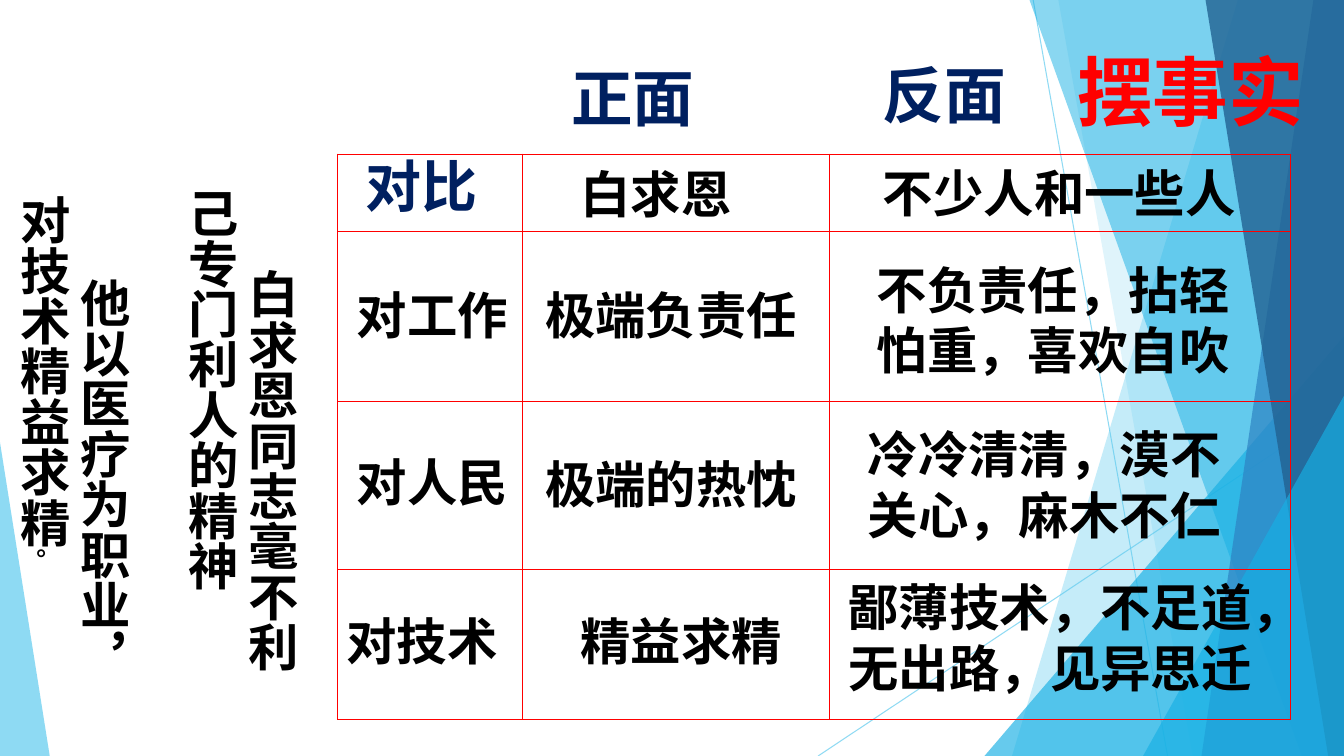
from dataclasses import dataclass

from lxml import etree
from pptx import Presentation
from pptx.dml.color import RGBColor
from pptx.enum.shapes import MSO_CONNECTOR, MSO_SHAPE
from pptx.enum.text import MSO_AUTO_SIZE
from pptx.oxml.ns import qn
from pptx.util import Emu, Inches, Pt

STRAIGHT = MSO_CONNECTOR.STRAIGHT
TRIANGLE = MSO_SHAPE.ISOSCELES_TRIANGLE
GROW = MSO_AUTO_SIZE.SHAPE_TO_FIT_TEXT
COLS, ROWS = 40, 22.5
CELL = Inches(13.333) / COLS


@dataclass(frozen=True)
class Theme:
    """Colours, fonts and type sizes of the slide."""
    sky: str = "5FCBEF"
    cyan: str = "17B0E4"
    blue: str = "2E83C3"
    deep: str = "226292"
    navy: str = "002060"
    red: str = "FF0000"
    black: str = "000000"
    font: str = "Cabin"
    corner_font: str = "Noto Sans CJK JP"
    head_font: str = "Noto Sans CJK SC"
    small: int = 18
    body: int = 36
    corner: int = 40
    head: int = 44
    title: int = 54


T = Theme()

FACET_TRIANGLES = {
    "wide": (29.3, 10, 10.7, 12.5),
    "narrow": (34.02, 11.78, 5.98, 10.72),
    "left": (0, 13.17, 1.48, 9.33),
}
TABLE_BOX = (10.05, 4.59)
TABLE_COLS = (5.49, 9.15, 13.71)
TABLE_ROWS = (2.31, 5.04, 5.01, 4.47)
ENTRIES = (
    ("白求恩", (16.98, 4.71, 5.13, 2.1), False),
    ("不少人和一些人", (25.98, 4.68, 11.13, 2.1), False),
    ("对工作", (10.32, 8.31, 5.13, 2.1), False),
    ("极端负责任", (15.93, 8.31, 8.16, 2.1), False),
    ("不负责任，拈轻怕重，喜欢自吹", (25.8, 7.56, 11.52, 3.9), True),
    ("对人民", (10.32, 13.29, 5.13, 2.1), False),
    ("极端的热忱", (15.93, 13.35, 8.16, 2.1), False),
    ("冷冷清清，漠不关心，麻木不仁", (25.53, 12.45, 12.45, 3.9), True),
    ("对技术", (10.02, 18, 5.13, 2.1), False),
    ("精益求精", (16.98, 18, 6.66, 2.1), False),
    ("鄙薄技术，不足道，无出路，见异思迁", (24.96, 17.01, 12.78, 3.93), True),
)


def grid(*units):
    """Convert grid units to slide lengths."""
    return [Emu(round(u * CELL)) for u in units]


def set_alpha(shape, percent):
    """Make every colour of a shape partly transparent."""
    for clr in shape._element.iter(qn("a:srgbClr")):
        etree.SubElement(clr, qn("a:alpha")).set("val", str(percent * 1000))


def paint(s, color, alpha):
    """Give a shape a translucent fill without line or shadow."""
    s.shadow.inherit = False
    s.fill.solid()
    s.fill.fore_color.rgb = RGBColor.from_string(color)
    s.line.fill.background()
    set_alpha(s, alpha)


def add_ray(slide, start, end):
    """Draw a thin translucent line."""
    ray = slide.shapes.add_connector(STRAIGHT, *grid(*start, *end))
    ray.line.color.rgb = RGBColor.from_string(T.sky)
    ray.line.width = Pt(0.75)
    etree.SubElement(ray._element.spPr, qn("a:effectLst"))
    set_alpha(ray, 70)


def add_band(slide, top, bottom, color, alpha):
    """Fill from a slanted left edge to the right side of the slide."""
    start, *rest = [grid(*pt) for pt in
                    ((top, 0), (COLS, 0), (COLS, ROWS), (bottom, ROWS))]
    builder = slide.shapes.build_freeform(*start, scale=1.0)
    builder.add_line_segments(rest, close=True)
    paint(builder.convert_to_shape(), color, alpha)


def add_triangle(slide, box, apex, color, alpha):
    """Draw a right triangle with its apex at one side."""
    s = slide.shapes.add_shape(TRIANGLE, *grid(*box))
    s.adjustments[0] = apex
    paint(s, color, alpha)


def add_run(p, text, size, color, font):
    """Append a bold run."""
    r = p.add_run()
    r.text = text
    r.font.size = Pt(size)
    r.font.bold = True
    r.font.name = font
    r.font.color.rgb = RGBColor.from_string(color)
    etree.SubElement(r.font._element, qn("a:ea")).set("typeface", T.font)


def add_text(slide, text, box, size=T.body, color=T.black, font=T.font,
             wrap=True, indent=None, ending=""):
    """Add a text box; an indent makes it vertical with a set-in first line."""
    sp = slide.shapes.add_textbox(*grid(*box))
    tf = sp.text_frame
    tf.word_wrap = wrap
    tf.auto_size = GROW
    p = tf.paragraphs[0]
    add_run(p, text, size, color, font)
    if ending:
        add_run(p, ending, T.small, color, font)
    if indent:
        tf._txBody.bodyPr.set("vert", "eaVert")
        p._p.get_or_add_pPr().set("indent", str(grid(indent)[0]))


def add_border(cell, side):
    """Draw one red cell border."""
    ln = etree.Element(qn(f"a:ln{side}"), w=str(Pt(1)))
    fill = etree.SubElement(ln, qn("a:solidFill"))
    etree.SubElement(fill, qn("a:srgbClr")).set("val", T.red)
    return ln


def add_ruled_table(slide):
    """Add the empty ruled table behind the entries."""
    size = (sum(TABLE_COLS), sum(TABLE_ROWS))
    table = slide.shapes.add_table(
        len(TABLE_ROWS), len(TABLE_COLS), *grid(*TABLE_BOX, *size)).table
    table.first_row = table.horz_banding = False
    for col, width in zip(table.columns, grid(*TABLE_COLS)):
        col.width = width
    for row, height in zip(table.rows, grid(*TABLE_ROWS)):
        row.height = height
    for cell in table.iter_cells():
        cell.fill.background()
        tc_pr = cell._tc.get_or_add_tcPr()
        for i, side in enumerate("LRTB"):
            tc_pr.insert(i, add_border(cell, side))


def add_backdrop(slide):
    """Draw the faceted background."""
    add_ray(slide, (30.75, 0), (34.75, ROWS))
    add_ray(slide, (COLS, 12.1), (24.35, ROWS))
    add_band(slide, 36.84, 30.12, T.sky, 36)
    add_band(slide, 31.5, 35.5, T.sky, 20)
    add_triangle(slide, FACET_TRIANGLES["wide"], 1, T.cyan, 66)
    add_band(slide, 30.64, 38.74, T.cyan, 50)
    add_band(slide, 39.09, 35.76, T.blue, 70)
    add_band(slide, 35.88, 39.53, T.deep, 80)
    add_triangle(slide, FACET_TRIANGLES["narrow"], 1, T.cyan, 66)
    add_triangle(slide, FACET_TRIANGLES["left"], 0, T.sky, 70)


def main():
    """Build and save the slide."""
    prs = Presentation()
    prs.slide_width, prs.slide_height = grid(COLS, ROWS)
    slide = prs.slides.add_slide(prs.slide_layouts[6])
    add_backdrop(slide)
    add_ruled_table(slide)
    for text, box, wrap in ENTRIES:
        add_text(slide, text, box, wrap=wrap)
    add_text(slide, "对比", (10.59, 4.35, 4.56, 2.31), size=T.corner,
             color=T.navy, font=T.corner_font)
    for text, box in (("正面", (16.71, 1.65, 4.77, 2.52)),
                      ("反面", (25.98, 1.56, 4.53, 2.52))):
        add_text(slide, text, box, size=T.head, color=T.navy, font=T.head_font)
    add_text(slide, "白求恩同志毫不利己专门利人的精神",
             (4.92, 5.31, 4.23, 15.78), indent=2.42)
    add_text(slide, "他以医疗为职业，对技术精益求精",
             (-0.09, 5.52, 4.23, 16.17), indent=2.45, ending="。")
    add_text(slide, "摆事实", (31.77, 1.2, 7.56, 3.03), size=T.title, color=T.red)
    prs.save("out.pptx")


if __name__ == "__main__":
    main()
